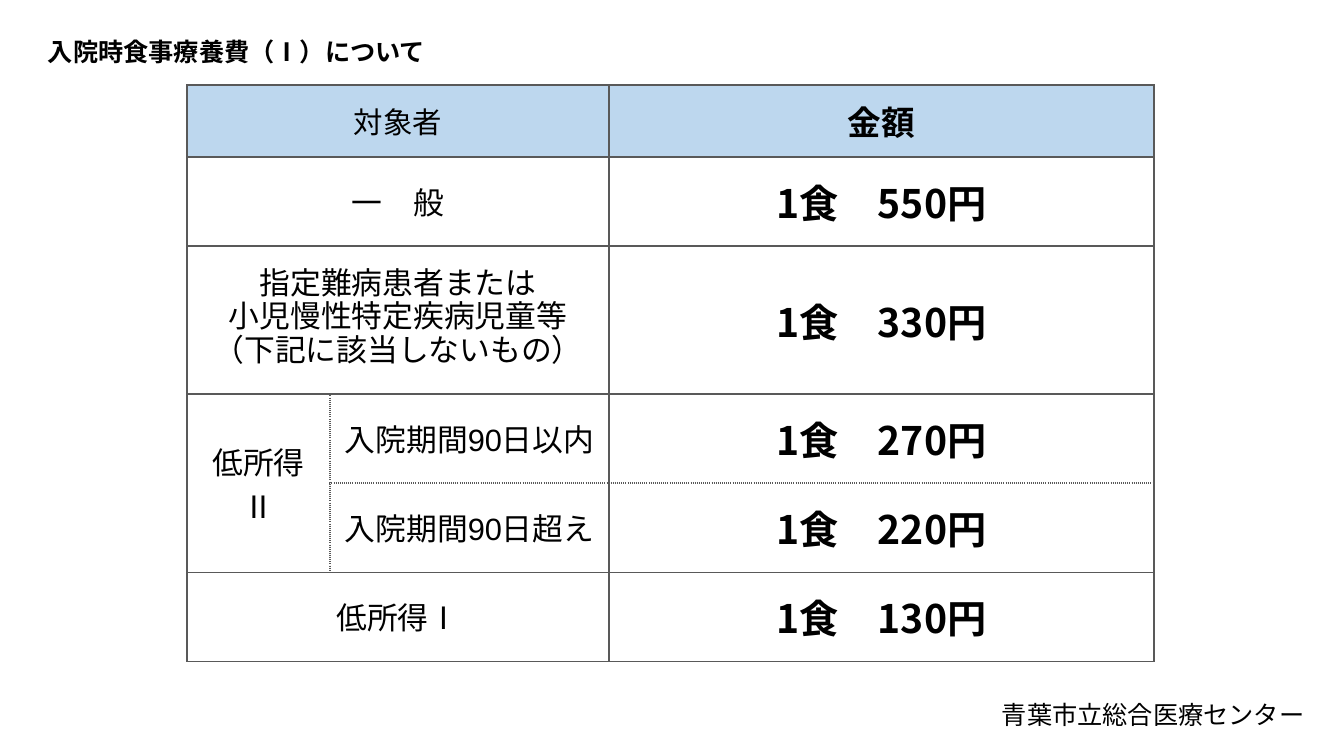
"""Builds the slide on hospital meal charges per patient group."""
from lxml import etree
from pptx import Presentation, util as u
from pptx.dml.color import RGBColor
from pptx.enum import lang, text
from pptx.oxml import ns

PX = 12192000 / 1344
COLORS = {"text": "000000", "header": "BDD7EE", "border": "595959"}
CJK = "Noto Sans CJK JP"


def px(n):
    return u.Emu(round(n * PX))


def style(p, size, bold=False, font=CJK):
    for r in p.runs:
        f = r.font
        f.size, f.bold, f.name = u.Pt(size), bold, font
        f.language_id = lang.MSO_LANGUAGE_ID.JAPANESE
        f.color.rgb = RGBColor.from_string(COLORS["text"])
        ea = etree.Element(ns.qn("a:ea"), typeface=CJK)
        r._r.rPr.find(ns.qn("a:latin")).addnext(ea)


prs = Presentation()
prs.slide_width, prs.slide_height = px(1344), px(756)
s = prs.slides.add_slide(prs.slide_layouts[6])

cols = [143, 279, 545]
rows = [72, 89, 148, 89, 89, 89]
table = s.shapes.add_table(len(rows), len(cols), px(187), px(85),
                           px(sum(cols)), px(sum(rows))).table
table.first_row = table.horz_banding = False
for col, w in zip(table.columns, cols):
    col.width = px(w)
for row, h in zip(table.rows, rows):
    row.height = px(h)

content = {
    (0, 0): ("対象者", 21, False),
    (0, 2): ("金額", 24, True),
    (1, 0): ("一　般", 22, False),
    (2, 0): ("指定難病患者または\n小児慢性特定疾病児童等\n（下記に該当しないもの）", 22, False),
    (3, 0): ("低所得Ⅱ", 22, False),
    (3, 1): ("入院期間90日以内", 22, False),
    (4, 1): ("入院期間90日超え", 22, False),
    (5, 0): ("低所得Ⅰ", 22, False),
}
for i, yen in enumerate([550, 330, 270, 220, 130], 1):
    content[i, 2] = (f"1食　{yen}円", 28, True)

dotted = {(3, 0): "R", (4, 0): "R", (3, 1): "LB", (4, 1): "LT",
          (3, 2): "B", (4, 2): "T"}
for i in range(len(rows)):
    for j in range(len(cols)):
        cell = table.cell(i, j)
        period = j == 1 and i in (3, 4)
        cell.vertical_anchor = text.MSO_ANCHOR.MIDDLE
        cell.margin_left = cell.margin_right = px(10 if period else 13)
        cell.margin_top = cell.margin_bottom = px(0 if period else 6)
        tcPr = cell._tc.get_or_add_tcPr()
        for side in "LRTB":
            ln = etree.SubElement(tcPr, ns.qn("a:ln" + side), w="12700")
            fill = etree.SubElement(ln, ns.qn("a:solidFill"))
            etree.SubElement(fill, ns.qn("a:srgbClr"), val=COLORS["border"])
            dash = "sysDot" if side in dotted.get((i, j), "") else "solid"
            etree.SubElement(ln, ns.qn("a:prstDash"), val=dash)
        if i == 0:
            cell.fill.solid()
            cell.fill.fore_color.rgb = RGBColor.from_string(COLORS["header"])
        else:
            cell.fill.background()
        if (i, j) in content:
            words, size, bold = content[i, j]
            cell.text_frame.text = words
            for p in cell.text_frame.paragraphs:
                p.alignment = text.PP_ALIGN.CENTER
                if (i, j) == (2, 0):
                    p.line_spacing = u.Pt(24)
                style(p, size, bold, "Arial" if period else CJK)

for i in (0, 1, 2, 5):
    table.cell(i, 0).merge(table.cell(i, 1))
table.cell(3, 0).merge(table.cell(4, 0))

for words, x, y, w, bold in [
    ("青葉市立総合医療センター", 992, 694, 326, False),
    ("入院時食事療養費（Ⅰ）について", 38, 31, 506, True),
]:
    tf = s.shapes.add_textbox(px(x), px(y), px(w), px(40)).text_frame
    tf.word_wrap = bold
    tf.auto_size = text.MSO_AUTO_SIZE.SHAPE_TO_FIT_TEXT
    tf.text = words
    style(tf.paragraphs[0], 18, bold)

prs.save("out.pptx")
